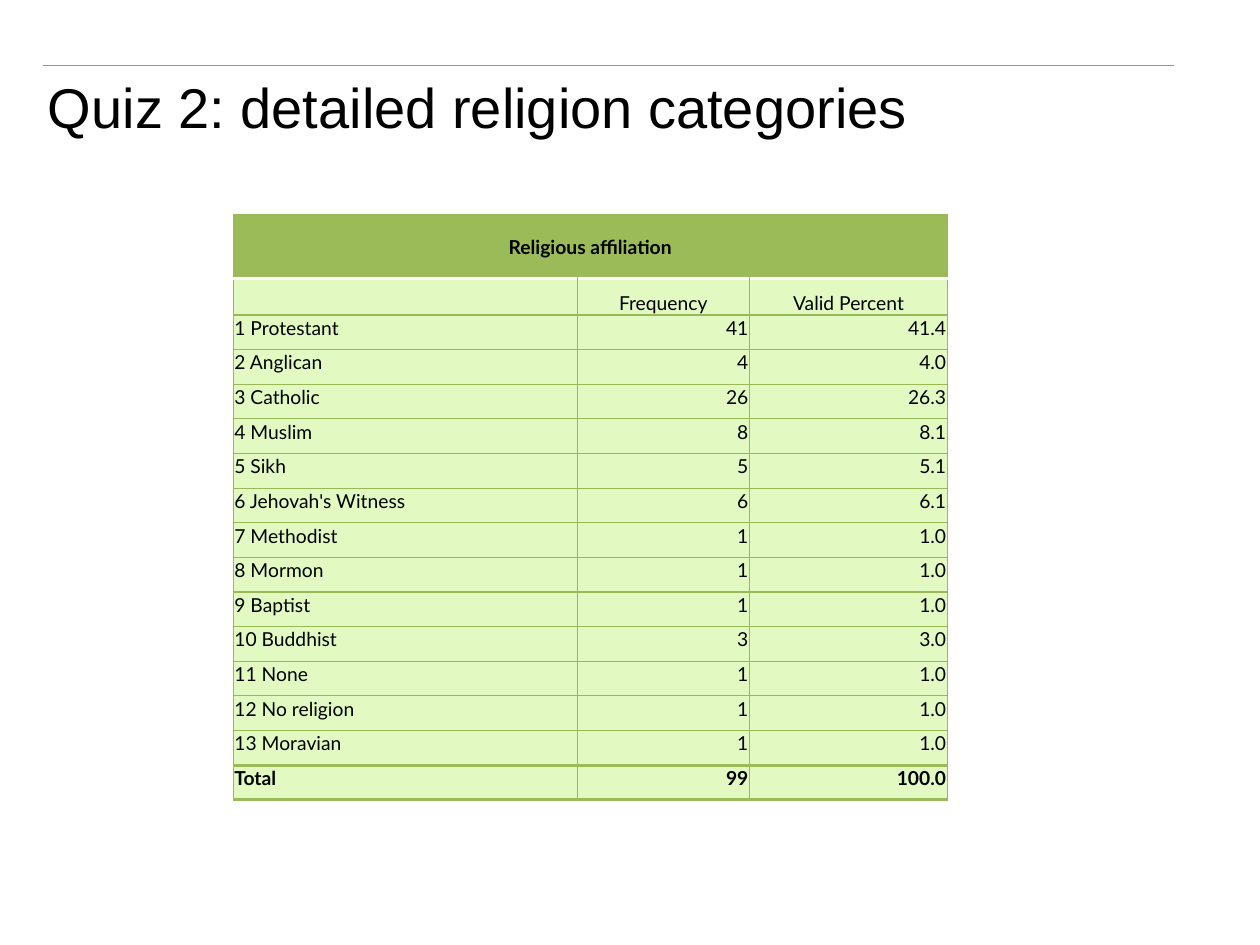
"""Build the religion categories slide with its frequency table."""
from lxml.etree import SubElement
from pptx import Presentation
from pptx.dml.color import RGBColor
from pptx.enum.shapes import MSO_CONNECTOR
from pptx.enum.text import MSO_ANCHOR, PP_ALIGN
from pptx.oxml.ns import qn
from pptx.util import Inches, Pt

TITLE = "Quiz 2: detailed religion categories"
HEAD = "Religious affiliation"
COLS = ("", "Frequency", "Valid Percent")
COUNTS = [
    ("Protestant", 41), ("Anglican", 4), ("Catholic", 26), ("Muslim", 8),
    ("Sikh", 5), ("Jehovah's Witness", 6), ("Methodist", 1), ("Mormon", 1),
    ("Baptist", 1), ("Buddhist", 3), ("None", 1), ("No religion", 1),
    ("Moravian", 1),
]
THEME = {
    "ink": "000000", "rule": "8E959C", "head": "9BBB59", "body": "E2FAC2",
    "grid": "98B955", "gap": "FFFFFF",
    "title": {"name": "Arial", "size": Pt(32), "bold": False},
    "cell": {"name": "Lato", "size": Pt(11)},
}
LEFT, TOP, HIGH = 1.85, 1.7, 4.65
WIDTHS = (2.73, 1.37, 1.57)
TALL = (0.51, 0.29)
INSET = {"margin_left": 0.01, "margin_right": 0.01, "margin_top": 0.01, "margin_bottom": 0}


def color(key):
    return RGBColor.from_string(THEME[key])


def style(font, form):
    for name, value in form.items():
        setattr(font, name, value)
    font.color.rgb = color("ink")


def edge(cell, side, key, width):
    line = SubElement(cell._tc.get_or_add_tcPr(), qn(f"a:ln{side}"), w=str(Pt(width)))
    fill = SubElement(line, qn("a:solidFill"))
    SubElement(fill, qn("a:srgbClr"), val=THEME[key])


def write(cell, text, align, anchor, bold):
    for name, value in INSET.items():
        setattr(cell, name, Inches(value))
    cell.vertical_anchor = anchor
    para = cell.text_frame.paragraphs[0]
    para.alignment = align
    if text:
        run = para.add_run()
        run.text = text
        style(run.font, THEME["cell"] | {"bold": bold})
    else:
        SubElement(para._p, qn("a:endParaRPr"), sz=str(int(THEME["cell"]["size"].pt * 100)))


def draw_title(slide):
    title = slide.shapes.title
    title.left, title.top, title.width, title.height = map(Inches, (0.28, 0.29, 9, 1.1))
    frame = title.text_frame
    frame.text = TITLE
    frame.word_wrap = True
    frame.vertical_anchor = MSO_ANCHOR.MIDDLE
    para = frame.paragraphs[0]
    para.alignment = PP_ALIGN.LEFT
    style(para.runs[0].font, THEME["title"])


def draw_rule(slide):
    rule = slide.shapes.add_connector(
        MSO_CONNECTOR.STRAIGHT, *map(Inches, (0.34, 0.52, 9.32, 0.52)))
    rule.line.color.rgb = color("rule")
    rule.line.width = Pt(0.75)
    SubElement(rule._element.spPr, qn("a:effectLst"))


def draw_table(slide):
    total = sum(count for _, count in COUNTS)
    named = [(f"{i} {name}", count) for i, (name, count) in enumerate(COUNTS, 1)]
    rows = [(HEAD, "", ""), COLS]
    rows += [(name, str(count), f"{100 * count / total:.1f}")
             for name, count in named + [("Total", total)]]
    last = len(rows) - 1
    lines = [("grid", 0.75)] * (last + 2)
    lines[1] = ("gap", 2)
    lines[-2:] = [("head", 2)] * 2

    table = slide.shapes.add_table(
        len(rows), len(WIDTHS),
        *map(Inches, (LEFT, TOP, sum(WIDTHS), HIGH))).table
    for col, width in zip(table.columns, WIDTHS):
        col.width = Inches(width)
    step = (HIGH - sum(TALL)) / (len(rows) - len(TALL))
    for r, texts in enumerate(rows):
        table.rows[r].height = Inches(TALL[r] if r < len(TALL) else step)
        anchor = {0: MSO_ANCHOR.MIDDLE, 1: MSO_ANCHOR.BOTTOM}.get(r, MSO_ANCHOR.TOP)
        for c, text in enumerate(texts):
            cell = table.cell(r, c)
            align = PP_ALIGN.CENTER if r < 2 else PP_ALIGN.RIGHT if c else PP_ALIGN.LEFT
            write(cell, text, align, anchor, r in (0, last))
            for side, line in zip("LRTB", (lines[0], lines[0], lines[r], lines[r + 1])):
                edge(cell, side, *line)
            cell.fill.solid()
            cell.fill.fore_color.rgb = color("body" if r else "head")
    table.cell(0, 0).merge(table.cell(0, len(WIDTHS) - 1))


def main():
    deck = Presentation()
    deck.slide_width, deck.slide_height = Inches(10), Inches(7.5)
    slide = deck.slides.add_slide(deck.slide_layouts[5])
    draw_rule(slide)
    draw_title(slide)
    draw_table(slide)
    deck.save("out.pptx")


if __name__ == "__main__":
    main()
